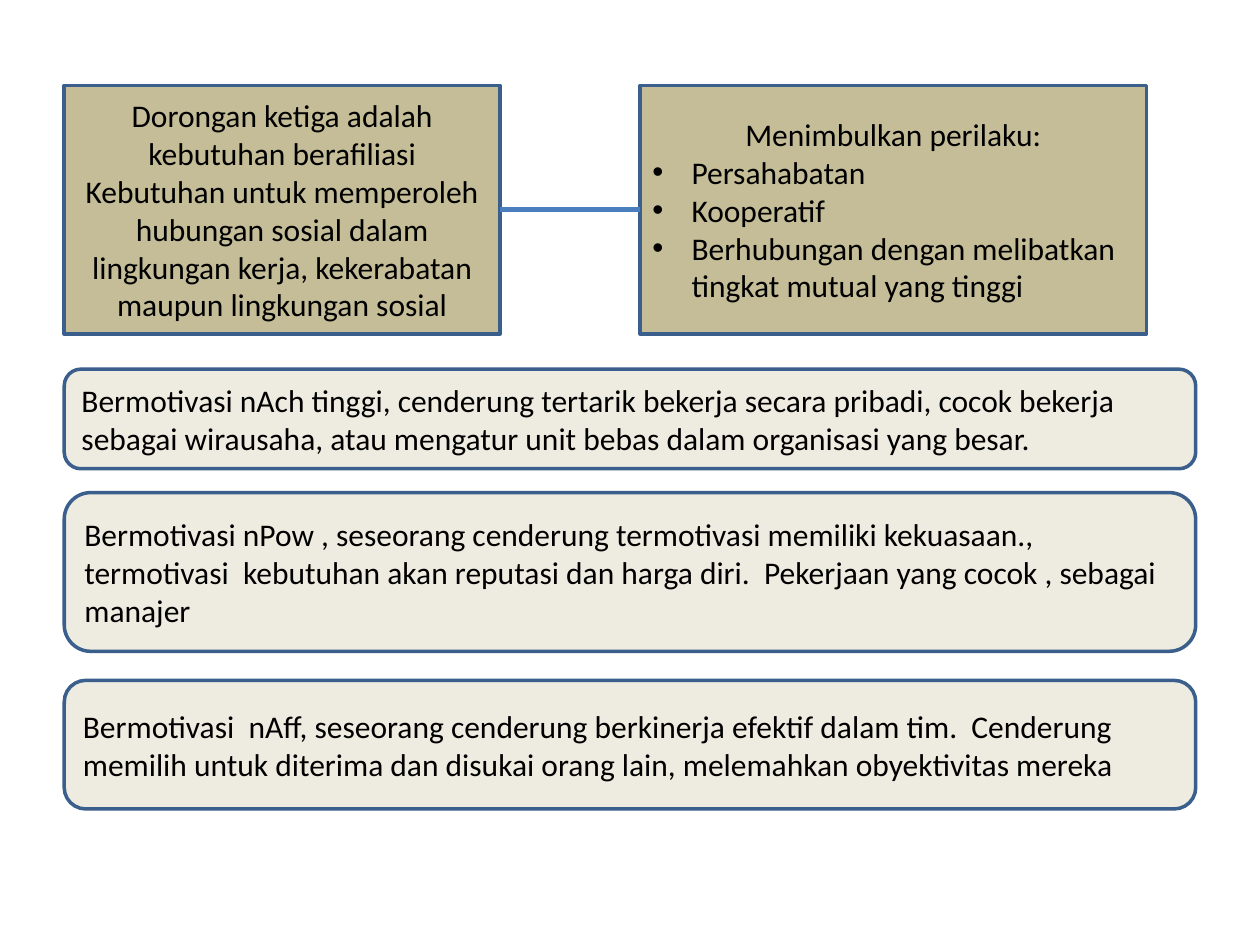
from lxml import etree
from pptx import Presentation
from pptx.dml.color import RGBColor
from pptx.enum.shapes import MSO_CONNECTOR, MSO_SHAPE
from pptx.enum.text import MSO_ANCHOR, PP_ALIGN
from pptx.oxml.ns import qn
from pptx.util import Inches, Pt

RECT, ROUND = MSO_SHAPE.RECTANGLE, MSO_SHAPE.ROUNDED_RECTANGLE
LINE = MSO_CONNECTOR.STRAIGHT
MID = MSO_ANCHOR.MIDDLE
LEFT, CENTER = PP_ALIGN.LEFT, PP_ALIGN.CENTER
TAN = RGBColor(0xC4, 0xBD, 0x97)
CREAM = RGBColor(0xEE, 0xEC, 0xE1)
NAVY = RGBColor(0x3A, 0x5F, 0x8C)
BLUE = RGBColor(0x4B, 0x7E, 0xBC)
BLACK = RGBColor(0, 0, 0)
FONT = {"name": "Calibri", "size": Pt(18)}
EDGE, WIDE = 0.51, 8.98
TOP, TALL = 0.68, 1.97

deck = Presentation()
deck.slide_width, deck.slide_height = Inches(10), Inches(7.5)
slide = deck.slides.add_slide(deck.slide_layouts[6])


def add_box(kind, area, fill, paras):
    box = slide.shapes.add_shape(kind, *map(Inches, area))
    box.shadow.inherit = False
    box.fill.solid()
    box.fill.fore_color.rgb = fill
    box.line.color.rgb = NAVY
    box.line.width = Pt(2)
    frame = box.text_frame
    frame.word_wrap = True
    frame.vertical_anchor = MID
    for i, (text, align, dot) in enumerate(paras):
        para = frame.paragraphs[0] if i == 0 else frame.add_paragraph()
        para.alignment = align
        if dot:
            props = para._p.get_or_add_pPr()
            props.set("marL", str(Inches(0.31)))
            props.set("indent", str(-Inches(0.31)))
            etree.SubElement(props, qn("a:buFont")).set("typeface", "Arial")
            etree.SubElement(props, qn("a:buChar")).set("char", "•")
        run = para.add_run()
        run.text = text
        for key, value in FONT.items():
            setattr(run.font, key, value)
        run.font.color.rgb = BLACK
    return box


drive = add_box(RECT, (EDGE, TOP, 3.46, TALL), TAN, [
    ("Dorongan ketiga adalah kebutuhan berafiliasi", CENTER, False),
    ("Kebutuhan untuk memperoleh hubungan sosial dalam lingkungan kerja, "
     "kekerabatan maupun lingkungan sosial", CENTER, False),
])
result = add_box(RECT, (5.08, TOP, 4.02, TALL), TAN, [
    ("Menimbulkan perilaku:", CENTER, False),
    ("Persahabatan", LEFT, True),
    ("Kooperatif", LEFT, True),
    ("Berhubungan dengan melibatkan tingkat mutual yang tinggi", LEFT, True),
])

link = slide.shapes.add_connector(LINE, 0, 0, 0, 0)
link.begin_connect(drive, 3)
link.end_connect(result, 1)
link.line.color.rgb = BLUE
link.line.width = Pt(3)
etree.SubElement(link._element.spPr, qn("a:effectLst"))

motives = [
    (2.93, 0.79, "Bermotivasi nAch tinggi, cenderung tertarik bekerja secara "
     "pribadi, cocok bekerja sebagai wirausaha, atau mengatur unit bebas "
     "dalam organisasi yang besar."),
    (3.91, 1.26, "Bermotivasi nPow , seseorang cenderung termotivasi memiliki "
     "kekuasaan., termotivasi  kebutuhan akan reputasi dan harga diri.  "
     "Pekerjaan yang cocok , sebagai manajer"),
    (5.4, 1.02, "Bermotivasi  nAff, seseorang cenderung berkinerja efektif "
     "dalam tim.  Cenderung memilih untuk diterima dan disukai orang lain, "
     "melemahkan obyektivitas mereka"),
]
for top, tall, text in motives:
    add_box(ROUND, (EDGE, top, WIDE, tall), CREAM, [(text, LEFT, False)])

deck.save("out.pptx")
